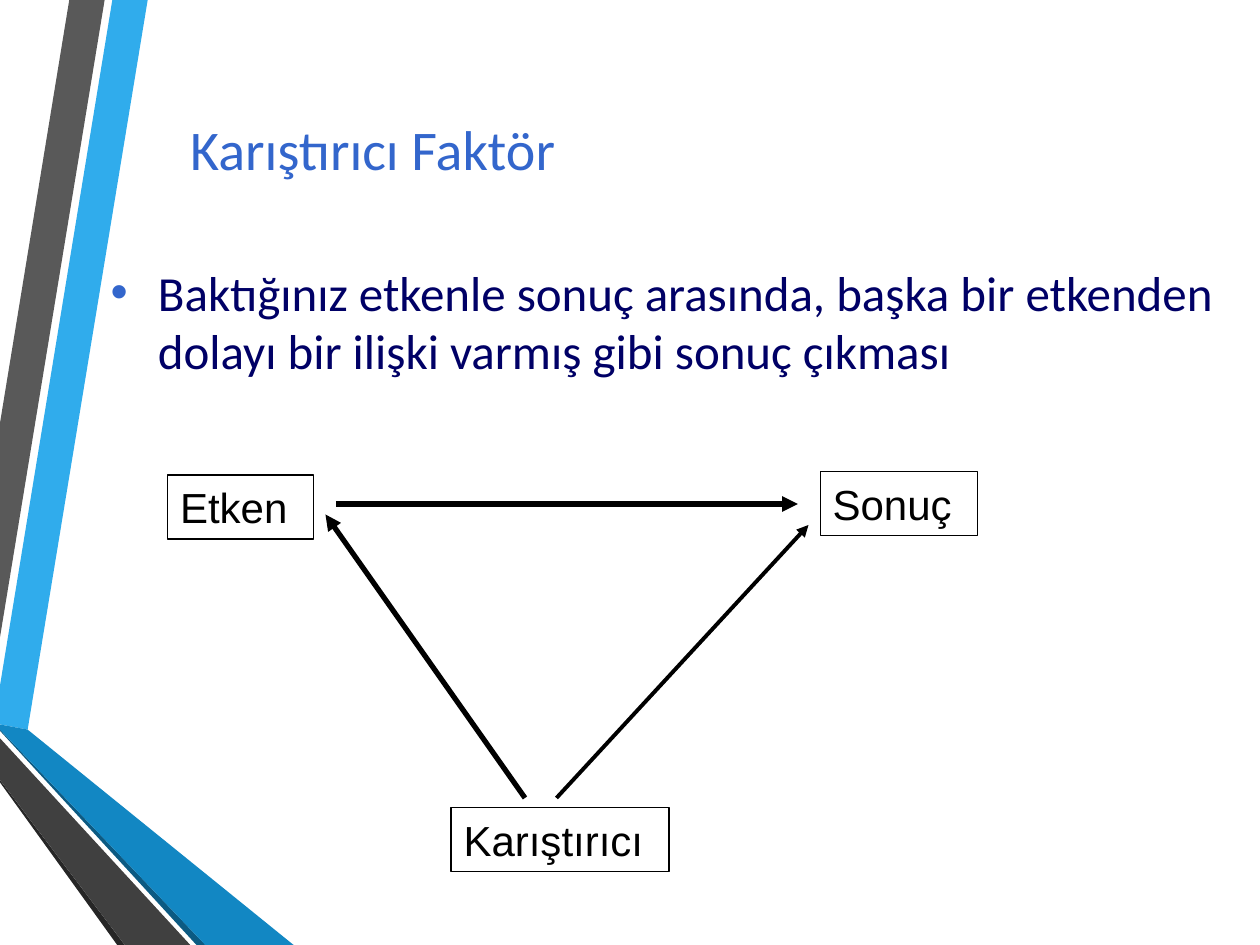
"""Builds a slide explaining the confounding factor with a three-node diagram."""
from lxml import etree
from pptx import Presentation
from pptx.dml.color import RGBColor
from pptx.enum.shapes import MSO_CONNECTOR, MSO_SHAPE
from pptx.enum.text import MSO_ANCHOR, PP_ALIGN
from pptx.oxml.ns import qn
from pptx.util import Pt

STRAIGHT = MSO_CONNECTOR.STRAIGHT
RECTANGLE = MSO_SHAPE.RECTANGLE
MIDDLE = MSO_ANCHOR.MIDDLE
LEFT = PP_ALIGN.LEFT


def rgb(value):
    return RGBColor.from_string(value)


def write(frame, text, font_name, size, color):
    frame.word_wrap = True
    frame.text = text
    paragraph = frame.paragraphs[0]
    paragraph.alignment = LEFT
    paragraph.font.name = font_name
    paragraph.font.size = Pt(size)
    paragraph.font.color.rgb = rgb(color)
    return paragraph


prs = Presentation()
prs.slide_width, prs.slide_height = Pt(720), Pt(540)
slide = prs.slides.add_slide(prs.slide_layouts[5])
shapes = slide.shapes

bands = [
    ("30ACEC", [(0, 391.7), (0, 414), (15.8, 416.9), (84.4, 0), (64.2, 0)]),
    ("595959", [(59.8, 0), (39.6, 0), (0, 241.9), (0, 364.3)]),
    ("262626", [(0, 445.7), (0, 447.1), (67, 540), (71.3, 540)]),
    ("0C5A82", [(0, 416.9), (0, 417.6), (112.3, 540), (117.4, 540)]),
    ("1287C3", [(0, 416.9), (117.4, 540), (167.8, 540), (15.8, 416.9), (0, 414)]),
    ("404040", [(0, 445.7), (71.3, 540), (108.7, 540), (0, 421.9)]),
]
for color, corners in bands:
    points = [(Pt(x), Pt(y)) for x, y in corners]
    builder = shapes.build_freeform(*points[0])
    builder.add_line_segments(points[1:], close=True)
    band = builder.convert_to_shape()
    band.shadow.inherit = False
    band.fill.solid()
    band.fill.fore_color.rgb = rgb(color)
    band.line.fill.background()

title = shapes.title
title.left, title.top, title.width, title.height = Pt(101.5), Pt(39.6), Pt(648), Pt(90)
title.text_frame.vertical_anchor = MIDDLE
write(title.text_frame, "Karıştırıcı Faktör", "Calibri", 32, "3366CC")

definition = shapes.add_textbox(Pt(56.2), Pt(146.2), Pt(648), Pt(356.4))
paragraph = write(
    definition.text_frame,
    "Baktığınız etkenle sonuç arasında, başka bir etkenden dolayı "
    "bir ilişki varmış gibi sonuç çıkması",
    "Calibri", 28, "000066",
)
paragraph.space_before = Pt(5.6)
properties = paragraph._p.get_or_add_pPr()
properties.set("marL", str(Pt(27)))
properties.set("indent", str(-Pt(27)))
bullet_color = etree.Element(qn("a:buClr"))
etree.SubElement(bullet_color, qn("a:srgbClr"), val="3366CC")
bullet_font = etree.Element(qn("a:buFont"), typeface="Arial")
bullet = etree.Element(qn("a:buChar"), char="•")
position = properties.index(properties.find(qn("a:spcBef"))) + 1
properties[position:position] = [bullet_color, bullet_font, bullet]

nodes = [
    ("Etken", 95.8, 271.4, 83.5),
    ("Sonuç", 468.7, 269.3, 90),
    ("Karıştırıcı", 257.8, 461.5, 124.6),
]
for label, left, top, width in nodes:
    node = shapes.add_shape(RECTANGLE, Pt(left), Pt(top), Pt(width), Pt(36.7))
    node.shadow.inherit = False
    node.fill.background()
    node.line.color.rgb = rgb("000000")
    node.line.width = Pt(0.75)
    node.text_frame.vertical_anchor = MIDDLE
    write(node.text_frame, label, "Arial", 24, "000000")

effects = [
    ((192, 288), (456, 288), 3),
    ((318, 456), (462, 300), 2.25),
    ((300, 456), (186, 294), 3),
]
for start, end, weight in effects:
    arrow = shapes.add_connector(STRAIGHT, *map(Pt, start + end))
    arrow.line.color.rgb = rgb("000000")
    arrow.line.width = Pt(weight)
    etree.SubElement(arrow.line._get_or_add_ln(), qn("a:tailEnd"), type="triangle")
    etree.SubElement(arrow._element.spPr, qn("a:effectLst"))

prs.save("out.pptx")
